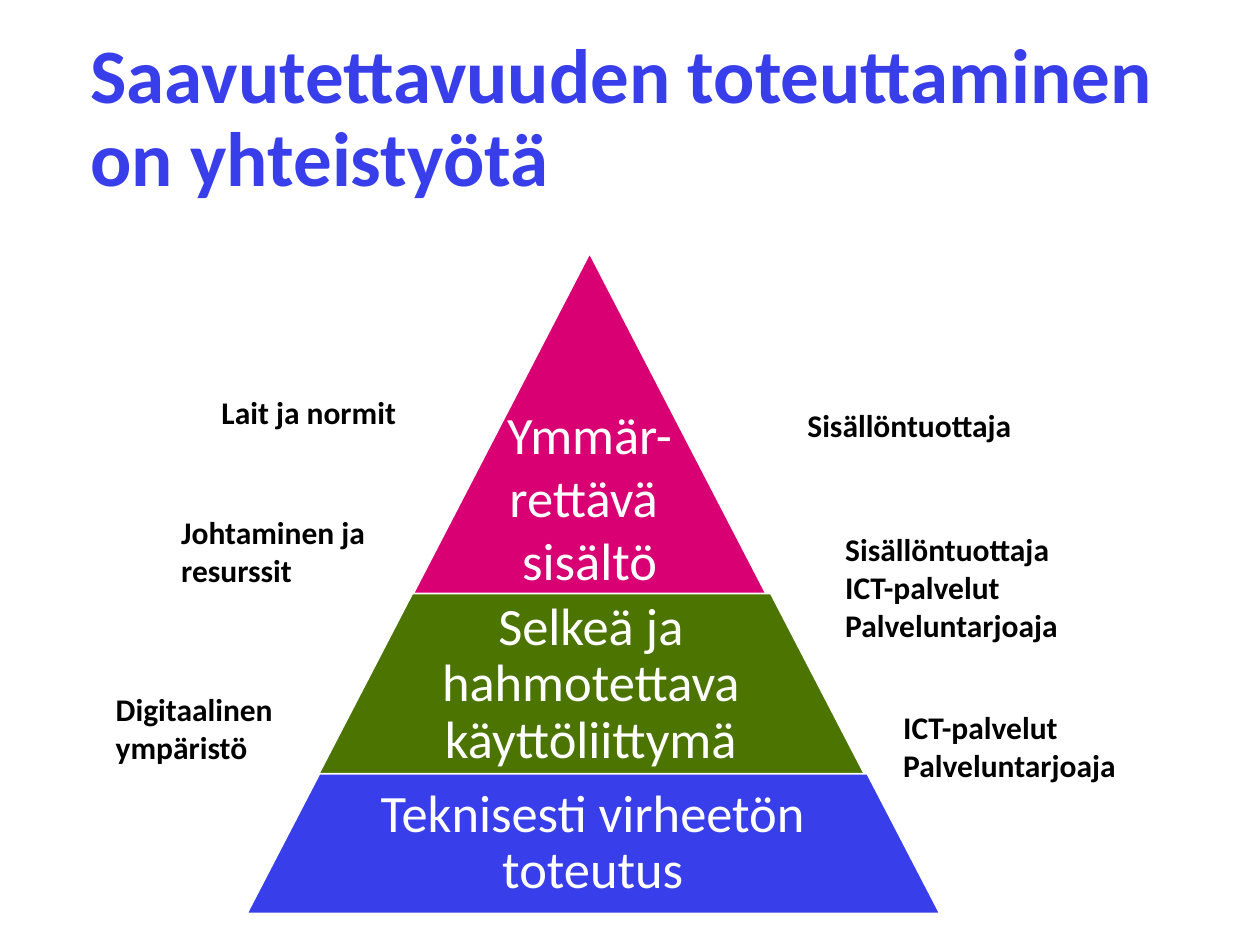
"""Build a slide with an accessibility pyramid and the parties responsible for each level."""
import pptx
import pptx.dml.color
import pptx.enum.shapes
import pptx.enum.text
import pptx.util

Inches = pptx.util.Inches
RGBColor = pptx.dml.color.RGBColor
MIDDLE = pptx.enum.text.MSO_ANCHOR.MIDDLE
TOP = pptx.enum.text.MSO_ANCHOR.TOP
LEFT = pptx.enum.text.PP_ALIGN.LEFT
CENTER = pptx.enum.text.PP_ALIGN.CENTER

BLUE = RGBColor(0x38, 0x3E, 0xEA)
PINK = RGBColor(0xD8, 0x00, 0x73)
GREEN = RGBColor(0x4B, 0x74, 0x00)
WHITE = RGBColor(0xFF, 0xFF, 0xFF)
BLACK = RGBColor(0x00, 0x00, 0x00)

presentation = pptx.Presentation()
presentation.slide_width = Inches(10)
presentation.slide_height = Inches(7.5)
slide = presentation.slides.add_slide(presentation.slide_layouts[6])


def add_text(paragraphs, position, size=18, color=BLACK, bold=True, align=LEFT,
             anchor=TOP, line_spacing=1.0, insets=(0.1, 0.05, 0.1, 0.05), fill=None):
    box = slide.shapes.add_textbox(*map(Inches, position))
    if fill is not None:
        box.fill.solid()
        box.fill.fore_color.rgb = fill
    frame = box.text_frame
    frame.word_wrap = True
    frame.vertical_anchor = anchor
    frame.margin_left, frame.margin_top, frame.margin_right, frame.margin_bottom = map(Inches, insets)
    for index, text in enumerate(paragraphs):
        paragraph = frame.add_paragraph() if index else frame.paragraphs[0]
        paragraph.text = text
        paragraph.alignment = align
        paragraph.line_spacing = line_spacing
        for run in paragraph.runs:
            run.font.name = "Calibri"
            run.font.size = pptx.util.Pt(size)
            run.font.bold = bold
            run.font.color.rgb = color


add_text(["Saavutettavuuden toteuttaminen on yhteistyötä"], (0.62, 0.3, 8.91, 1.3),
         size=44, color=BLUE, anchor=MIDDLE, line_spacing=0.9)

left_labels = [
    ("Lait ja normit", (1.66, 3.07, 2.53, 0.4), None),
    ("Johtaminen ja resurssit", (1.34, 4.02, 2.53, 0.71), None),
    ("Digitaalinen ympäristö", (0.82, 5.43, 1.72, 0.71), WHITE),
]
for text, position, fill in left_labels:
    add_text([text], position, fill=fill)

levels = [
    ("Ymmär-\vrettävä \vsisältö", PINK, (3.26, 2.01, 2.84, 2.74), (3.26, 2.84), 1.16, 1.0),
    ("Selkeä ja hahmotettava käyttöliittymä", GREEN, (2.52, 4.71, 4.35, 1.45), (3.28, 2.82), 0.04, 0.9),
    ("Teknisesti virheetön toteutus", BLUE, (1.96, 6.14, 5.5, 1.11), (2.92, 3.57), 0.04, 0.9),
]
for text, color, position, (text_left, text_width), top_inset, line_spacing in levels:
    level = slide.shapes.add_shape(pptx.enum.shapes.MSO_SHAPE.TRAPEZOID, *map(Inches, position))
    level.adjustments[0] = 0.519
    level.shadow.inherit = False
    level.fill.solid()
    level.fill.fore_color.rgb = color
    level.line.color.rgb = WHITE
    level.line.width = pptx.util.Pt(1)
    add_text([text], (text_left, position[1], text_width, position[3]), size=30, color=WHITE,
             bold=False, align=CENTER, anchor=MIDDLE, line_spacing=line_spacing,
             insets=(0.04, top_inset, 0.04, 0.04))

right_labels = [
    (["ICT-palvelut", "Palveluntarjoaja"], (7.07, 5.57, 2.22, 0.71), WHITE),
    (["Sisällöntuottaja", "ICT-palvelut", "Palveluntarjoaja"], (6.61, 4.16, 2.08, 1.01), None),
    (["Sisällöntuottaja"], (6.31, 3.17, 2.53, 0.4), None),
]
for paragraphs, position, fill in right_labels:
    add_text(paragraphs, position, fill=fill)

presentation.save("out.pptx")
